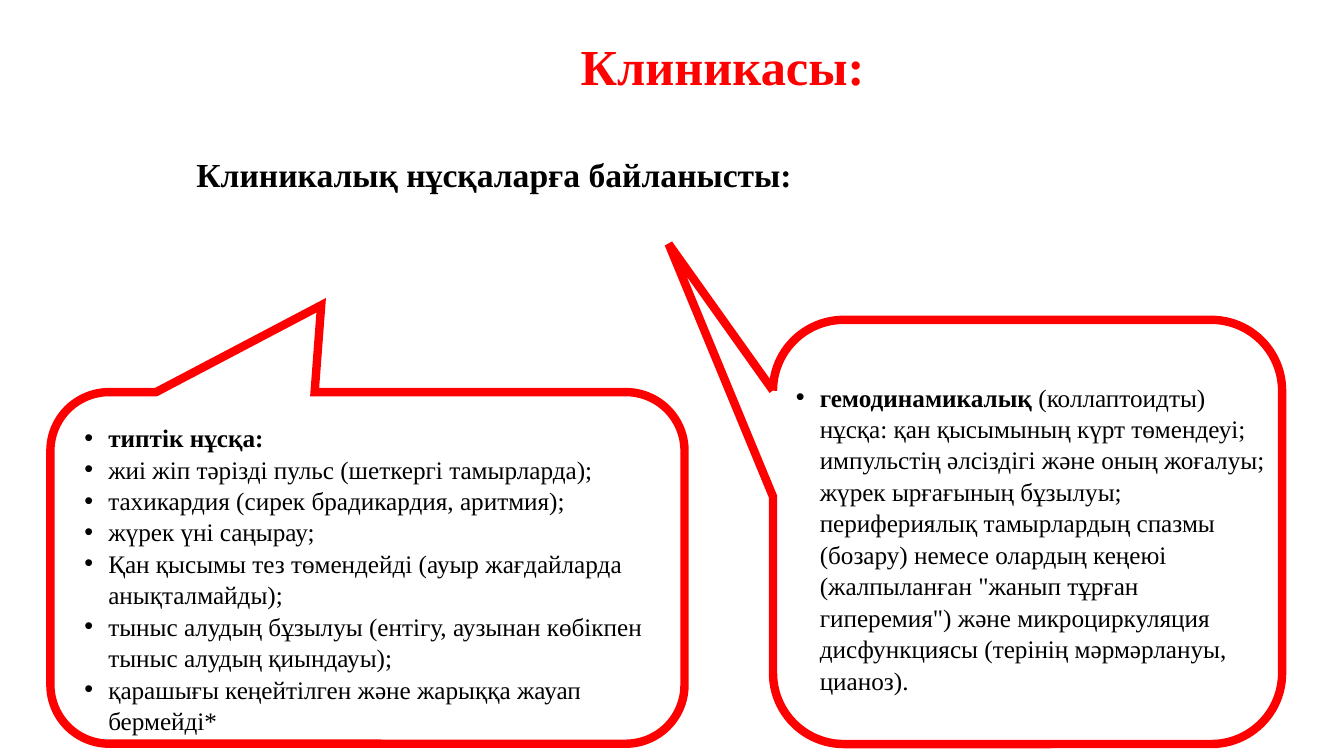
from dataclasses import dataclass

from lxml.etree import SubElement
from pptx import Presentation
from pptx.dml.color import RGBColor
from pptx.enum.shapes import MSO_SHAPE
from pptx.enum.text import MSO_ANCHOR, MSO_AUTO_SIZE as AutoSize, PP_ALIGN
from pptx.oxml.ns import qn
from pptx.util import Cm, Pt

COLORS = {"accent": "FF0000", "text": "000000"}
FONT = "Times New Roman"
LINE_SPACING = 1.04
BULLET_INDENT = Cm(0.6)


@dataclass(frozen=True)
class Box:
    left: float
    top: float
    width: float
    height: float

    def lengths(self) -> tuple:
        return Cm(self.left), Cm(self.top), Cm(self.width), Cm(self.height)


@dataclass(frozen=True)
class Span:
    text: str
    bold: bool = False


@dataclass(frozen=True)
class Variant:
    callout: Box
    rotation: int
    tail: tuple
    body: Box
    items: list


VARIANTS = [
    Variant(
        Box(20.55, 6.99, 10.69, 12.83), 90, (-0.679, 0.705, 0.167),
        Box(19.81, 9.47, 12.45, 7.87),
        [[Span("гемодинамикалық", True),
          Span(" (коллаптоидты) нұсқа: қан қысымының күрт төмендеуі; "
               "импульстің әлсіздігі және оның жоғалуы; жүрек ырғағының бұзылуы; "
               "перифериялық тамырлардың спазмы (бозару) немесе олардың кеңеюі "
               "(жалпыланған \"жанып тұрған гиперемия\") және микроциркуляция "
               "дисфункциясы (терінің мәрмәрлануы, цианоз).")]],
    ),
    Variant(
        Box(1.27, 9.88, 15.98, 8.86), 180, (0.073, 0.747, 0.167),
        Box(1.88, 10.49, 15.37, 7.87),
        [[Span("типтік нұсқа:", True)],
         [Span("жиі жіп тәрізді пульс (шеткергі тамырларда);")],
         [Span("тахикардия (сирек брадикардия, аритмия);")],
         [Span("жүрек үні саңырау;")],
         [Span("Қан қысымы тез төмендейді (ауыр жағдайларда анықталмайды);")],
         [Span("тыныс алудың бұзылуы (ентігу, аузынан көбікпен тыныс алудың қиындауы);")],
         [Span("қарашығы кеңейтілген және жарыққа жауап бермейді*")]],
    ),
]


def add_bullet(paragraph) -> None:
    properties = paragraph._p.get_or_add_pPr()
    properties.set("marL", str(BULLET_INDENT))
    properties.set("indent", str(-BULLET_INDENT))
    SubElement(properties, qn("a:buFont")).set("typeface", "Arial")
    SubElement(properties, qn("a:buChar")).set("char", "•")


def write(frame, items: list, size: int, color: str = "text",
          bulleted: bool = False, wrap: bool = True) -> None:
    frame.word_wrap = wrap
    frame.auto_size = AutoSize.SHAPE_TO_FIT_TEXT
    frame.vertical_anchor = MSO_ANCHOR.TOP
    for index, spans in enumerate(items):
        paragraph = frame.add_paragraph() if index else frame.paragraphs[0]
        paragraph.line_spacing = LINE_SPACING
        if bulleted:
            add_bullet(paragraph)
        for span in spans:
            run = paragraph.add_run()
            run.text = span.text
            run.font.name = FONT
            run.font.size = Pt(size)
            run.font.bold = span.bold
            run.font.color.rgb = RGBColor.from_string(COLORS[color])


def add_callout(slide, variant: Variant) -> None:
    callout = slide.shapes.add_shape(
        MSO_SHAPE.ROUNDED_RECTANGULAR_CALLOUT, *variant.callout.lengths())
    callout.rotation = variant.rotation
    for index, value in enumerate(variant.tail):
        callout.adjustments[index] = value
    callout.shadow.inherit = False
    callout.fill.background()
    callout.line.width = Pt(6)
    callout.line.color.rgb = RGBColor.from_string(COLORS["accent"])
    # Sharp corners on the pointer
    outline = callout._element.spPr.find(qn("a:ln"))
    SubElement(outline, qn("a:miter")).set("lim", "800000")


def main() -> None:
    deck = Presentation()
    deck.slide_width, deck.slide_height = Cm(33.87), Cm(19.05)
    slide = deck.slides.add_slide(deck.slide_layouts[5])

    # Title
    title = slide.shapes.title
    title.left, title.top, title.width, title.height = Box(14.17, 0.71, 8.08, 1.8).lengths()
    write(title.text_frame, [[Span("Клиникасы:", True)]], 36, "accent", wrap=False)
    title.text_frame.paragraphs[0].alignment = PP_ALIGN.CENTER

    # Callout outlines
    for variant in VARIANTS:
        add_callout(slide, variant)

    # Subtitle
    subtitle = slide.shapes.add_textbox(*Box(4.7, 3.71, 18.64, 1.3).lengths())
    write(subtitle.text_frame, [[Span("Клиникалық нұсқаларға байланысты:", True)]], 24)

    # Clinical variants
    for variant in VARIANTS:
        body = slide.shapes.add_textbox(*variant.body.lengths())
        write(body.text_frame, variant.items, 18, bulleted=True)

    deck.save("out.pptx")


if __name__ == "__main__":
    main()
